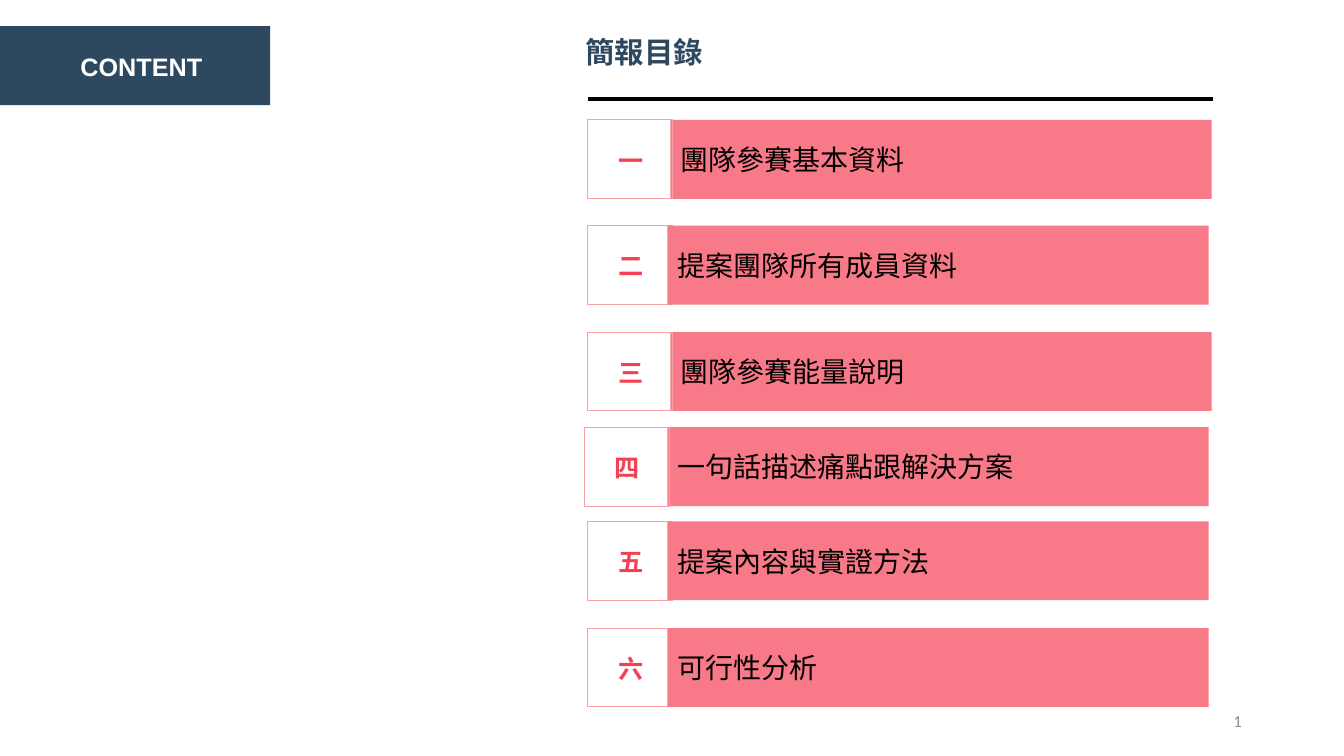
"""Build the contents slide of a team proposal."""
from pptx import Presentation
from pptx.dml.color import RGBColor
from pptx.enum.shapes import MSO_CONNECTOR, MSO_SHAPE
from pptx.enum.text import MSO_ANCHOR as Anchor, PP_ALIGN as Align
from pptx.oxml.ns import qn
from pptx.util import Pt
from lxml.etree import SubElement

COLORS = {
    "navy": "2E4860", "white": "FFFFFF", "black": "000000", "bar": "F87987",
    "numeral": "F53F53", "frame": "FAA0AA", "page": "8C8C8C",
}
ROW_HEIGHT = 56.4
FRAME_WIDTH = 60.4
BAR_WIDTH = 386.6
CHAPTERS = [
    ("一", "團隊參賽基本資料", 419.8, 478.9, 85.7, False),
    ("二", "提案團隊所有成員資料", 419.8, 476.8, 161.2, True),
    ("三", "團隊參賽能量說明", 419.8, 478.9, 237.2, False),
    ("四", "一句話描述痛點跟解決方案", 417.6, 476.8, 305.2, False),
    ("五", "提案內容與實證方法", 419.8, 476.8, 372.4, True),
    ("六", "可行性分析", 419.8, 476.8, 448.6, True),
]


def color(name):
    return RGBColor.from_string(COLORS[name])


def write(shape, text, size, ink, bold=False, align=Align.LEFT,
          anchor=Anchor.MIDDLE, font="Arial"):
    frame = shape.text_frame
    frame.text = text
    frame.word_wrap = True
    frame.vertical_anchor = anchor
    line = frame.paragraphs[0]
    line.alignment = align
    style = line.runs[0].font
    style.name, style.size, style.bold = font, Pt(size), bold
    style.color.rgb = color(ink)


def add_label(shapes, left, top, width, height, text, size, ink, **style):
    label = shapes.add_textbox(Pt(left), Pt(top), Pt(width), Pt(height))
    write(label, text, size, ink, **style)


def add_block(shapes, left, top, width, height, fill=None, outline=None):
    block = shapes.add_shape(MSO_SHAPE.RECTANGLE, Pt(left), Pt(top), Pt(width), Pt(height))
    block.shadow.inherit = False
    if fill:
        block.fill.solid()
        block.fill.fore_color.rgb = color(fill)
    else:
        block.fill.background()
    if outline:
        block.line.color.rgb = color(outline)
        block.line.width = Pt(0.75)
    else:
        block.line.fill.background()
    return block


def add_rule(shapes, left, right, y):
    rule = shapes.add_connector(MSO_CONNECTOR.STRAIGHT, Pt(left), Pt(y), Pt(right), Pt(y))
    rule.line.color.rgb = color("black")
    rule.line.width = Pt(3)
    SubElement(rule.element.spPr, qn("a:effectLst"))


def add_chapter(shapes, numeral, heading, frame_left, bar_left, top, bar_in_front):
    row = shapes.add_group_shape().shapes

    def add_frame():
        add_block(row, frame_left, top, FRAME_WIDTH, ROW_HEIGHT, outline="frame")

    if bar_in_front:
        add_frame()
    bar = add_block(row, bar_left, top, BAR_WIDTH, ROW_HEIGHT, fill="bar")
    write(bar, heading, 20, "black")
    if not bar_in_front:
        add_frame()
    add_label(row, frame_left + 14.6, top + 14.2, 30.2, 29, numeral, 18, "numeral",
              bold=True, align=Align.CENTER)


def main():
    deck = Presentation()
    deck.slide_width, deck.slide_height = Pt(960), Pt(540)
    shapes = deck.slides.add_slide(deck.slide_layouts[6]).shapes
    add_block(shapes, 0, 18.7, 193, 56.4, fill="navy")
    add_label(shapes, 50.4, 33.5, 224.6, 27.4, "CONTENT", 18, "white", bold=True)
    add_label(shapes, 411, 20.9, 371.5, 46.8, "簡報目錄", 21, "navy",
              bold=True, anchor=Anchor.TOP)
    add_rule(shapes, 419.8, 866.2, 70.6)
    for chapter in CHAPTERS:
        add_chapter(shapes, *chapter)
    add_label(shapes, 678.2, 500.4, 216, 28.8, "1", 12, "page",
              align=Align.RIGHT, font="Calibri")
    deck.save("out.pptx")


if __name__ == "__main__":
    main()
